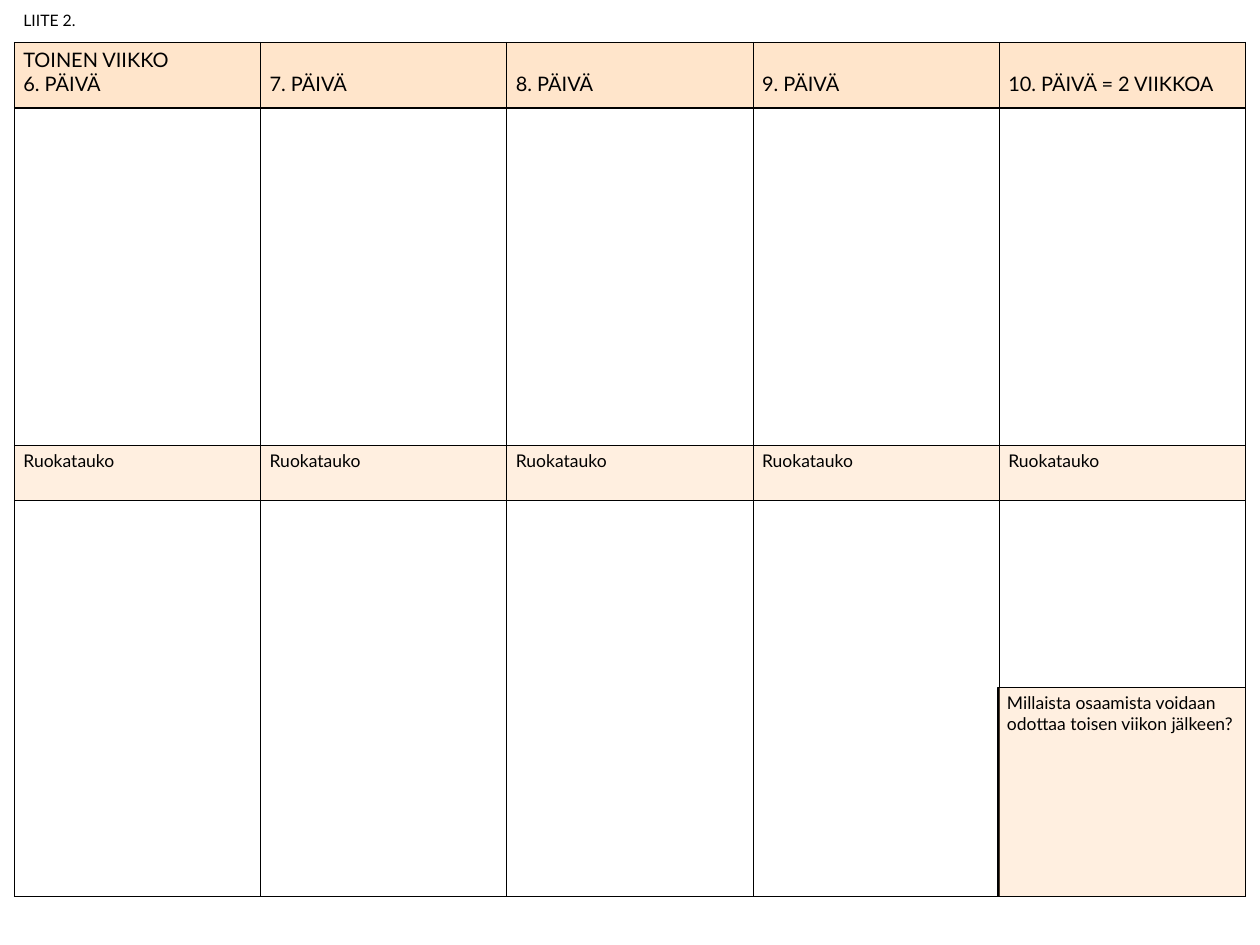
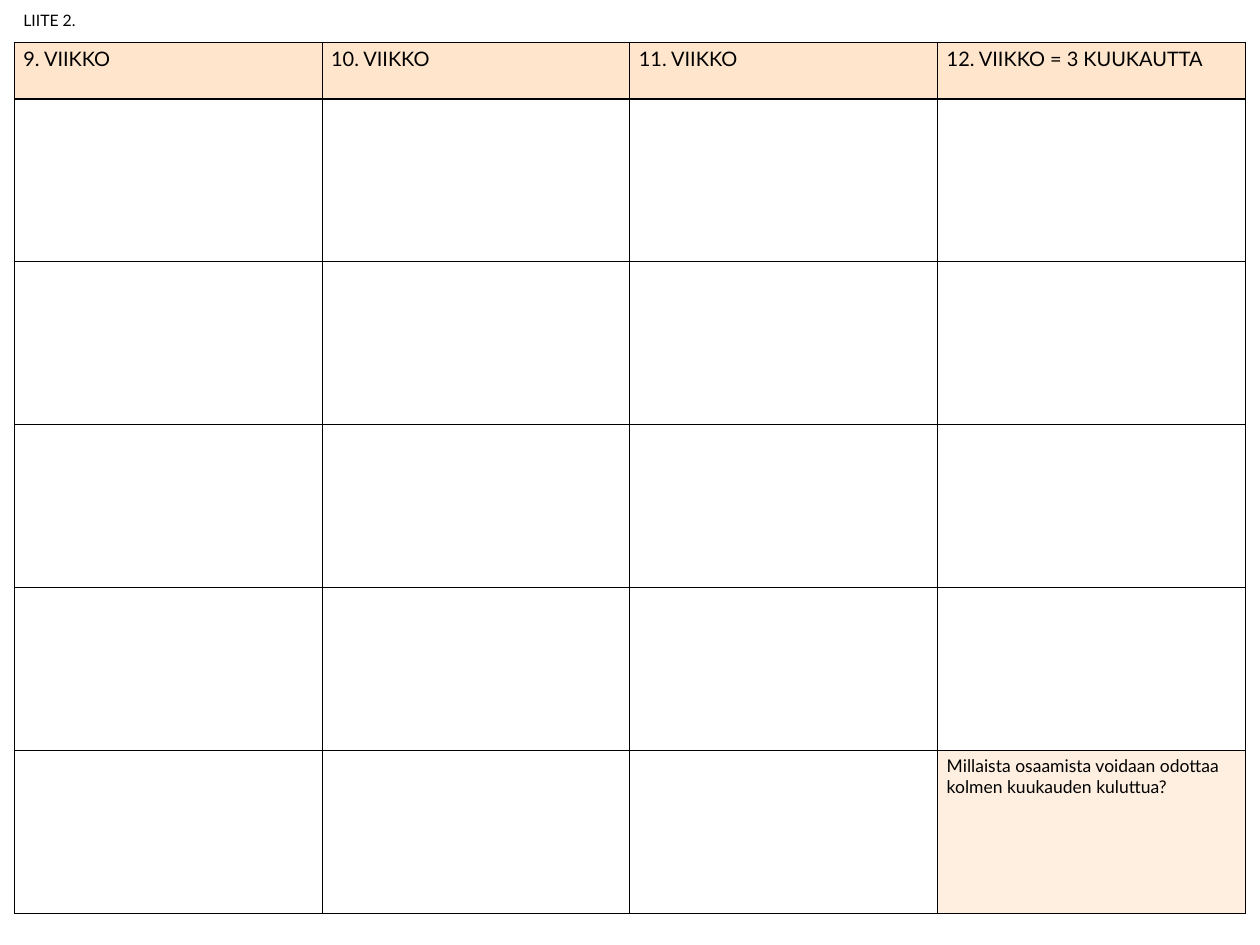
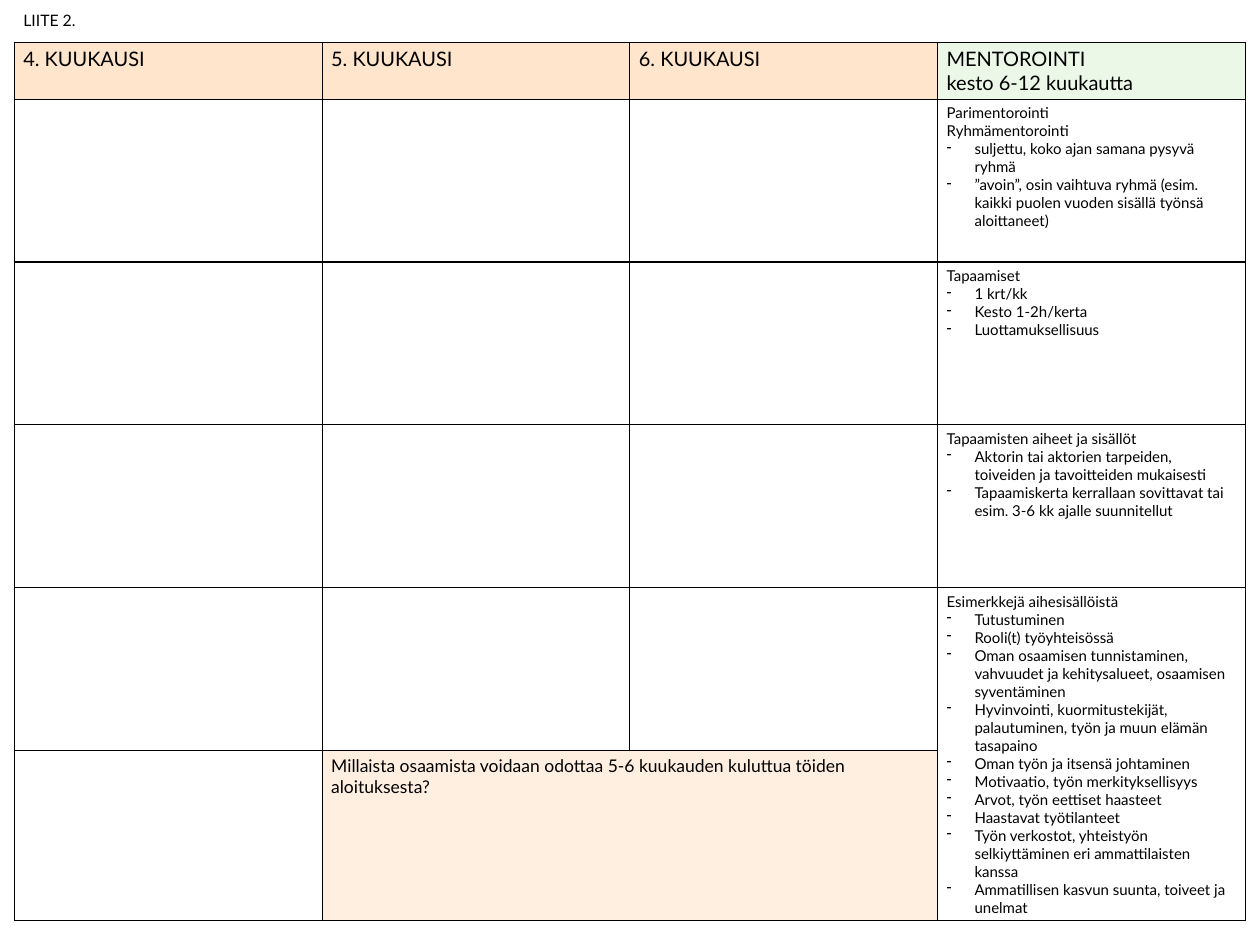
from lxml import etree
from pptx import Presentation
from pptx.dml.color import RGBColor
from pptx.enum.shapes import MSO_SHAPE
from pptx.enum.text import MSO_ANCHOR, MSO_AUTO_SIZE, PP_ALIGN
from pptx.oxml.ns import qn
from pptx.util import Inches, Pt

# Shared style
FONT = "Lato"
BLACK, PEACH, GREEN = "000000", "FFCC99", "D9F2D0"
HEADER_ALPHA, ACCENT_ALPHA = 50, 30
HEADER_SIZE, BODY_SIZE, LIST_SIZE = 16, 14, 12
LEFT, TABLE_TOP, WIDTH = 0.16, 0.47, 13.68
HEADER_HEIGHT, ROW_HEIGHT = 0.63, 1.81
LIST_INDENT = 0.31

MENTORING = [
    """Parimentorointi
Ryhmämentorointi
- suljettu, koko ajan samana pysyvä ryhmä
- ”avoin”, osin vaihtuva ryhmä (esim. kaikki puolen vuoden sisällä työnsä aloittaneet)""",
    """Tapaamiset
- 1 krt/kk
- Kesto 1-2h/kerta
- Luottamuksellisuus""",
    """Tapaamisten aiheet ja sisällöt
- Aktorin tai aktorien tarpeiden, toiveiden ja tavoitteiden mukaisesti
- Tapaamiskerta kerrallaan sovittavat tai esim. 3-6 kk ajalle suunnitellut""",
    """Esimerkkejä aihesisällöistä
- Tutustuminen
- Rooli(t) työyhteisössä
- Oman osaamisen tunnistaminen, vahvuudet ja kehitysalueet, osaamisen syventäminen
- Hyvinvointi, kuormitustekijät, palautuminen, työn ja muun elämän tasapaino
- Oman työn ja itsensä johtaminen
- Motivaatio, työn merkityksellisyys
- Arvot, työn eettiset haasteet
- Haastavat työtilanteet
- Työn verkostot, yhteistyön selkiyttäminen eri ammattilaisten kanssa
- Ammatillisen kasvun suunta, toiveet ja unelmat""",
]


def rgb(value):
    return RGBColor.from_string(value)


def set_fill(fill, color, alpha, holder):
    """Fill a shape or cell with a colour of the given opacity in percent."""
    fill.solid()
    fill.fore_color.rgb = rgb(color)
    clr = holder.find(qn("a:solidFill")).find(qn("a:srgbClr"))
    etree.SubElement(clr, qn("a:alpha"), val=str(alpha * 1000))


def set_bullet(p):
    pPr = p._p.get_or_add_pPr()
    pPr.set("marL", str(Inches(LIST_INDENT)))
    pPr.set("indent", str(-Inches(LIST_INDENT)))
    etree.SubElement(pPr, qn("a:buChar"), char="-")


def write(tf, text, size):
    """Write lines of text; a line that starts with a dash becomes a list item."""
    tf.text = text
    for p in tf.paragraphs:
        if p.text.startswith("- "):
            p.text = p.text[2:]
            set_bullet(p)
        p.alignment = PP_ALIGN.LEFT
        for r in p.runs:
            r.font.name = FONT
            r.font.size = Pt(size)
            r.font.color.rgb = rgb(BLACK)


def set_borders(cell):
    tcPr = cell._tc.get_or_add_tcPr()
    for i, side in enumerate(("lnL", "lnR", "lnT", "lnB")):
        ln = etree.Element(qn(f"a:{side}"), w=str(Pt(1)))
        fill = etree.SubElement(ln, qn("a:solidFill"))
        etree.SubElement(fill, qn("a:srgbClr"), val=BLACK)
        tcPr.insert(i, ln)


def tint_cell(cell, color, alpha):
    set_fill(cell.fill, color, alpha, cell._tc.tcPr)


def add_accent(cell, text):
    write(cell.text_frame, text, BODY_SIZE)
    tint_cell(cell, PEACH, ACCENT_ALPHA)


def add_plan_slide(prs):
    slide = prs.slides.add_slide(prs.slide_layouts[5])
    title = slide.shapes.title
    title.left, title.top = Inches(LEFT), Inches(0)
    title.width, title.height = Inches(WIDTH), Inches(TABLE_TOP)
    tf = title.text_frame
    write(tf, "LIITE 2.", 12.6)
    tf.auto_size = MSO_AUTO_SIZE.NONE
    tf.vertical_anchor = MSO_ANCHOR.MIDDLE
    tf.paragraphs[0].line_spacing = 0.9
    return slide


def add_plan_table(slide, headers, heights, header_colors=None):
    """Add a ruled table of equal columns with a tinted header row."""
    table = slide.shapes.add_table(
        len(heights), len(headers), Inches(LEFT), Inches(TABLE_TOP),
        Inches(WIDTH), Inches(sum(heights))).table
    table.first_row = table.horz_banding = False
    for row, height in zip(table.rows, heights):
        row.height = Inches(height)
    for cell in table.iter_cells():
        cell.fill.background()
        set_borders(cell)
    colors = header_colors or [PEACH] * len(headers)
    for col, (text, color) in enumerate(zip(headers, colors)):
        cell = table.cell(0, col)
        write(cell.text_frame, text, HEADER_SIZE)
        tint_cell(cell, color, HEADER_ALPHA)
    return table


def add_question_box(slide, text, x, y, w, h):
    sp = slide.shapes.add_shape(MSO_SHAPE.RECTANGLE, Inches(x), Inches(y),
                                Inches(w), Inches(h))
    sp.shadow.inherit = False
    set_fill(sp.fill, PEACH, ACCENT_ALPHA, sp._element.spPr)
    sp.line.color.rgb = rgb(BLACK)
    sp.line.width = Pt(1)
    tf = sp.text_frame
    tf.word_wrap = True
    tf.vertical_anchor = MSO_ANCHOR.TOP
    write(tf, text, BODY_SIZE)


def build_second_week(prs):
    slide = add_plan_slide(prs)
    headers = ["TOINEN VIIKKO\n6. PÄIVÄ", "7. PÄIVÄ", "8. PÄIVÄ", "9. PÄIVÄ",
               "10. PÄIVÄ = 2 VIIKKOA"]
    table = add_plan_table(slide, headers, [0.73, 3.75, 0.61, 4.4])
    for col in range(len(headers)):
        header = table.cell(0, col)
        header.vertical_anchor = MSO_ANCHOR.BOTTOM
        header.margin_bottom = Inches(0.14)
        add_accent(table.cell(2, col), "Ruokatauko")
    add_question_box(slide, "Millaista osaamista voidaan odottaa toisen viikon jälkeen?",
                     11.09, 7.64, 2.75, 2.32)


def build_third_month(prs):
    slide = add_plan_slide(prs)
    headers = ["9. VIIKKO", "10. VIIKKO", "11. VIIKKO", "12. VIIKKO = 3 KUUKAUTTA"]
    table = add_plan_table(slide, headers, [HEADER_HEIGHT] + [ROW_HEIGHT] * 5)
    add_accent(table.cell(5, 3),
               "Millaista osaamista voidaan odottaa kolmen kuukauden kuluttua?")


def build_mentoring(prs):
    slide = add_plan_slide(prs)
    headers = ["4. KUUKAUSI", "5. KUUKAUSI", "6. KUUKAUSI",
               "MENTOROINTI\vkesto 6-12 kuukautta"]
    table = add_plan_table(slide, headers, [HEADER_HEIGHT] + [ROW_HEIGHT] * 4 + [1.89],
                           [PEACH] * 3 + [GREEN])
    table.cell(4, 3).merge(table.cell(5, 3))
    table.cell(5, 1).merge(table.cell(5, 2))
    for row, text in enumerate(MENTORING, start=1):
        write(table.cell(row, 3).text_frame, text, LIST_SIZE)
    add_accent(table.cell(5, 1), "Millaista osaamista voidaan odottaa 5-6 kuukauden "
                                 "kuluttua töiden aloituksesta?")


def main():
    prs = Presentation()
    prs.slide_width, prs.slide_height = Inches(14), Inches(10.5)
    build_second_week(prs)
    build_third_month(prs)
    build_mentoring(prs)
    prs.save("out.pptx")


if __name__ == "__main__":
    main()
